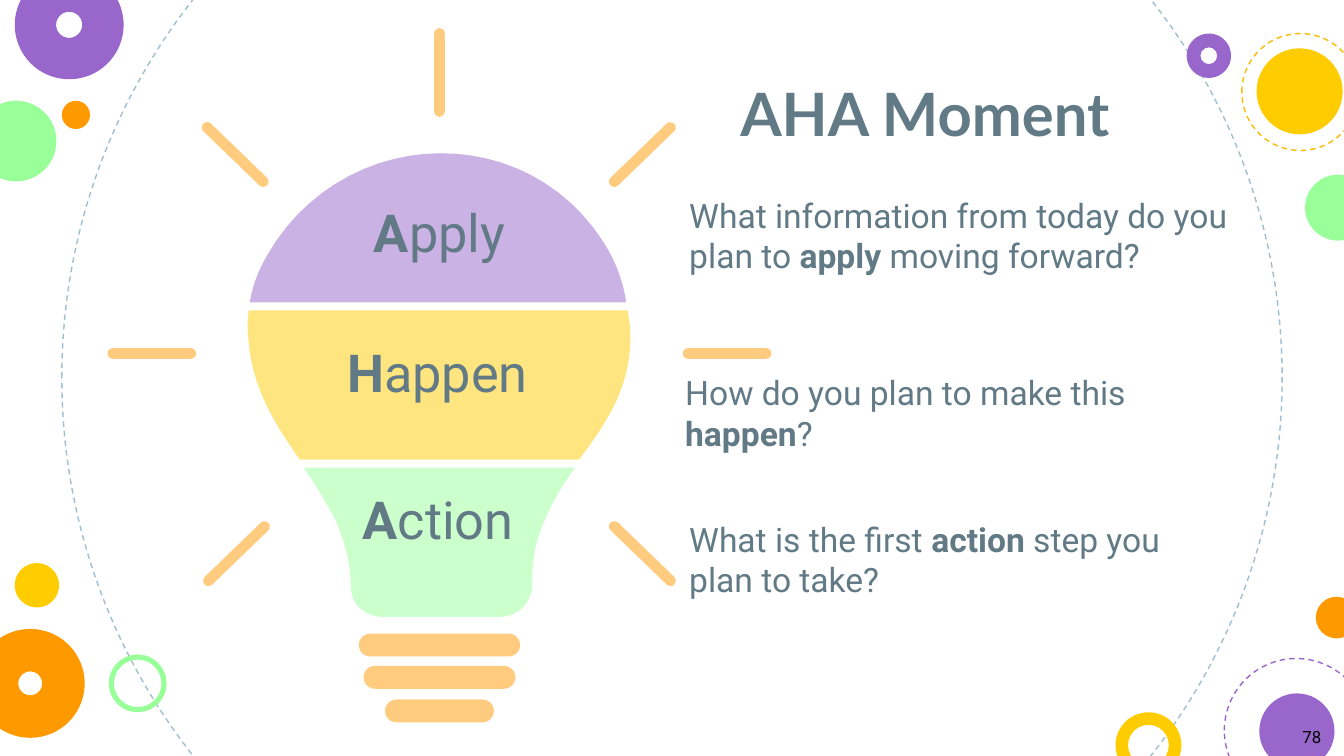
"""Build the AHA Moment slide: a light bulb with three reflection questions."""
from dataclasses import dataclass
from typing import Optional

from lxml.etree import SubElement
from pptx import Presentation
from pptx.dml.color import RGBColor
from pptx.enum.dml import MSO_LINE
from pptx.enum.shapes import MSO_SHAPE
from pptx.enum.text import MSO_ANCHOR, MSO_AUTO_SIZE, PP_ALIGN
from pptx.oxml.ns import qn
from pptx.util import Inches, Pt


@dataclass(frozen=True)
class Theme:
    purple: str = "9966CC"
    yellow: str = "FFCC00"
    green: str = "99FF99"
    orange: str = "FF9900"
    gold: str = "F8BB00"
    mist: str = "A1BECC"
    text: str = "617A86"
    black: str = "000000"
    body_font: str = "Roboto"
    title_font: str = "Lato"
    title: int = 32
    label: int = 28
    body: int = 18
    number: int = 9
    dash_width: float = 0.75
    alpha: int = 50


@dataclass(frozen=True)
class Circle:
    x: float
    y: float
    size: float
    color: str
    ring: Optional[float] = None
    dashed: bool = False


@dataclass(frozen=True)
class Band:
    color: str
    start: tuple
    segments: tuple


@dataclass(frozen=True)
class Bar:
    cx: float
    cy: float
    width: float
    height: float
    angle: float = 0


@dataclass(frozen=True)
class Text:
    x: float
    y: float
    w: float
    h: float
    text: str
    size: int
    align: PP_ALIGN = PP_ALIGN.LEFT
    font: str = Theme.body_font
    color: str = Theme.text
    anchor: MSO_ANCHOR = MSO_ANCHOR.TOP
    grow: bool = True


T = Theme()
CIRCLES = (
    Circle(0.46, -1.73, 9.08, T.mist, dashed=True),
    Circle(-0.18, 0.75, 0.6, T.green),
    Circle(8.3, 5.3, 0.49, T.yellow, 0.19),
    Circle(0.11, -0.22, 0.81, T.purple, 0.38),
    Circle(0.46, 0.75, 0.21, T.orange),
    Circle(9.11, 4.9, 1.07, T.purple, dashed=True),
    Circle(0.81, 4.87, 0.43, T.green, 0.09),
    Circle(9.79, 4.44, 0.31, T.orange),
    Circle(-0.18, 4.68, 0.81, T.orange, 0.39),
    Circle(9.37, 5.16, 0.56, T.purple),
    Circle(8.83, 0.25, 0.33, T.purple, 0.31),
    Circle(9.35, 0.36, 0.64, T.yellow),
    Circle(9.71, 1.3, 0.49, T.green),
    Circle(9.24, 0.25, 0.87, T.gold, dashed=True),
    Circle(0.11, 4.19, 0.33, T.yellow),
)
BANDS = (
    Band(T.purple, (4.66, 2.25), (
        (4.64, 2.11, 4.59, 1.97, 4.52, 1.85), (4.49, 1.8),
        (3.92, 0.91, 2.64, 0.93, 2.05, 1.8), (2.02, 1.85),
        (1.94, 1.97, 1.88, 2.11, 1.86, 2.25))),
    Band(T.yellow, (1.85, 2.54), (
        (1.88, 2.9, 2.05, 3.16, 2.23, 3.42), (4.31, 3.42),
        (4.5, 3.16, 4.68, 2.91, 4.69, 2.54), (4.69, 2.49),
        (4.69, 2.43, 4.68, 2.37, 4.67, 2.31), (1.85, 2.31),
        (1.84, 2.39, 1.84, 2.47, 1.85, 2.54))),
    Band(T.green, (2.26, 3.48), (
        (2.35, 3.61, 2.43, 3.74, 2.5, 3.88), (2.52, 3.93),
        (2.57, 4.06, 2.61, 4.2, 2.61, 4.36),
        (2.61, 4.49, 2.71, 4.59, 2.85, 4.59), (3.72, 4.59),
        (3.86, 4.59, 3.97, 4.47, 3.96, 4.33),
        (3.96, 4.18, 3.98, 4.05, 4.03, 3.93), (4.05, 3.88),
        (4.11, 3.73, 4.19, 3.6, 4.28, 3.48))),
)
RAYS = tuple(Bar(cx, cy, 0.66, 0.08, angle) for cx, cy, angle in (
    (4.78, 1.15, -44), (5.41, 2.63, 0), (4.78, 4.12, 44), (1.76, 4.12, -44),
    (1.13, 2.63, 0), (1.75, 1.15, 44), (3.27, 0.54, 90)))
BASE = tuple(Bar(3.27, cy, width, 0.17)
             for cy, width in ((4.8, 1.2), (5.04, 1.13), (5.29, 0.81)))
TEXTS = (
    Text(2.55, 1.44, 1.44, 0.57, "**A**pply", T.label, PP_ALIGN.CENTER),
    Text(2.36, 2.48, 1.79, 0.57, "**H**appen", T.label, PP_ALIGN.CENTER),
    Text(2.42, 3.58, 1.68, 0.57, "**A**ction", T.label, PP_ALIGN.CENTER),
    Text(5.41, 0.52, 4.84, 0.7, "**AHA Moment**", T.title, font=T.title_font, grow=False),
    Text(5.03, 1.4, 4.31, 0.71,
         "What information from today do you plan to **apply** moving forward?", T.body),
    Text(5, 2.72, 4.2, 0.71, "How do you plan to make this **happen**?", T.body),
    Text(5.03, 3.81, 4.2, 0.71,
         "What is the first **action** step you plan to take?", T.body),
    Text(9.47, 5.33, 0.46, 0.3, "78", T.number, PP_ALIGN.RIGHT, color=T.black,
         anchor=MSO_ANCHOR.MIDDLE, grow=False),
)


def paint(sp, color: str, alpha: int = 100) -> None:
    """Give a shape a plain fill without line or shadow."""
    sp.shadow.inherit = False
    sp.line.fill.background()
    sp.fill.solid()
    sp.fill.fore_color.rgb = RGBColor.from_string(color)
    if alpha < 100:
        clr = sp._element.spPr.find(qn("a:solidFill"))[0]
        SubElement(clr, qn("a:alpha")).set("val", str(alpha * 1000))


def draw_circle(shapes, c: Circle) -> None:
    """Draw a disc, a ring or a dashed circle."""
    kind = MSO_SHAPE.OVAL if c.ring is None else MSO_SHAPE.DONUT
    sp = shapes.add_shape(kind, Inches(c.x), Inches(c.y), Inches(c.size), Inches(c.size))
    paint(sp, c.color)
    if c.ring is not None:
        sp.adjustments[0] = c.ring
    if c.dashed:
        sp.fill.background()
        sp.line.color.rgb = RGBColor.from_string(c.color)
        sp.line.width = Pt(T.dash_width)
        sp.line.dash_style = MSO_LINE.DASH


def curve(p0: tuple, seg: tuple, steps: int = 24) -> list:
    """Return points along a cubic Bezier curve."""
    pts = (p0, seg[:2], seg[2:4], seg[4:])
    out = []
    for i in range(1, steps + 1):
        t = i / steps
        u = 1 - t
        weights = (u ** 3, 3 * u * u * t, 3 * u * t * t, t ** 3)
        out.append(tuple(sum(w * p[k] for w, p in zip(weights, pts)) for k in (0, 1)))
    return out


def draw_band(shapes, b: Band) -> None:
    """Draw one band of the bulb."""
    pts = [b.start]
    for seg in b.segments:
        pts += [seg] if len(seg) == 2 else curve(pts[-1], seg)
    pts = [(Inches(x), Inches(y)) for x, y in pts]
    builder = shapes.build_freeform(*pts[0])
    builder.add_line_segments(pts[1:], close=True)
    paint(builder.convert_to_shape(), b.color, T.alpha)


def draw_bar(shapes, b: Bar) -> None:
    """Draw a round-ended bar about its centre."""
    sp = shapes.add_shape(MSO_SHAPE.ROUNDED_RECTANGLE, Inches(b.cx - b.width / 2),
                          Inches(b.cy - b.height / 2), Inches(b.width), Inches(b.height))
    sp.adjustments[0] = 0.5
    sp.rotation = b.angle
    paint(sp, T.orange, T.alpha)


def draw_text(shapes, t: Text) -> None:
    """Write a text box, with bold parts between double asterisks."""
    tf = shapes.add_textbox(Inches(t.x), Inches(t.y), Inches(t.w), Inches(t.h)).text_frame
    tf.word_wrap = True
    tf.auto_size = MSO_AUTO_SIZE.SHAPE_TO_FIT_TEXT if t.grow else MSO_AUTO_SIZE.NONE
    tf.vertical_anchor = t.anchor
    p = tf.paragraphs[0]
    p.alignment = t.align
    for i, part in enumerate(t.text.split("**")):
        if part:
            r = p.add_run()
            r.text = part
            r.font.name = t.font
            r.font.size = Pt(t.size)
            r.font.bold = i % 2 == 1
            r.font.color.rgb = RGBColor.from_string(t.color)


def main() -> None:
    """Build and save the slide."""
    prs = Presentation()
    prs.slide_width, prs.slide_height = Inches(10), Inches(10 * 9 / 16)
    shapes = prs.slides.add_slide(prs.slide_layouts[6]).shapes
    for draw, items in ((draw_circle, CIRCLES), (draw_band, BANDS),
                        (draw_bar, RAYS + BASE), (draw_text, TEXTS)):
        for item in items:
            draw(shapes, item)
    prs.save("out.pptx")


if __name__ == "__main__":
    main()
